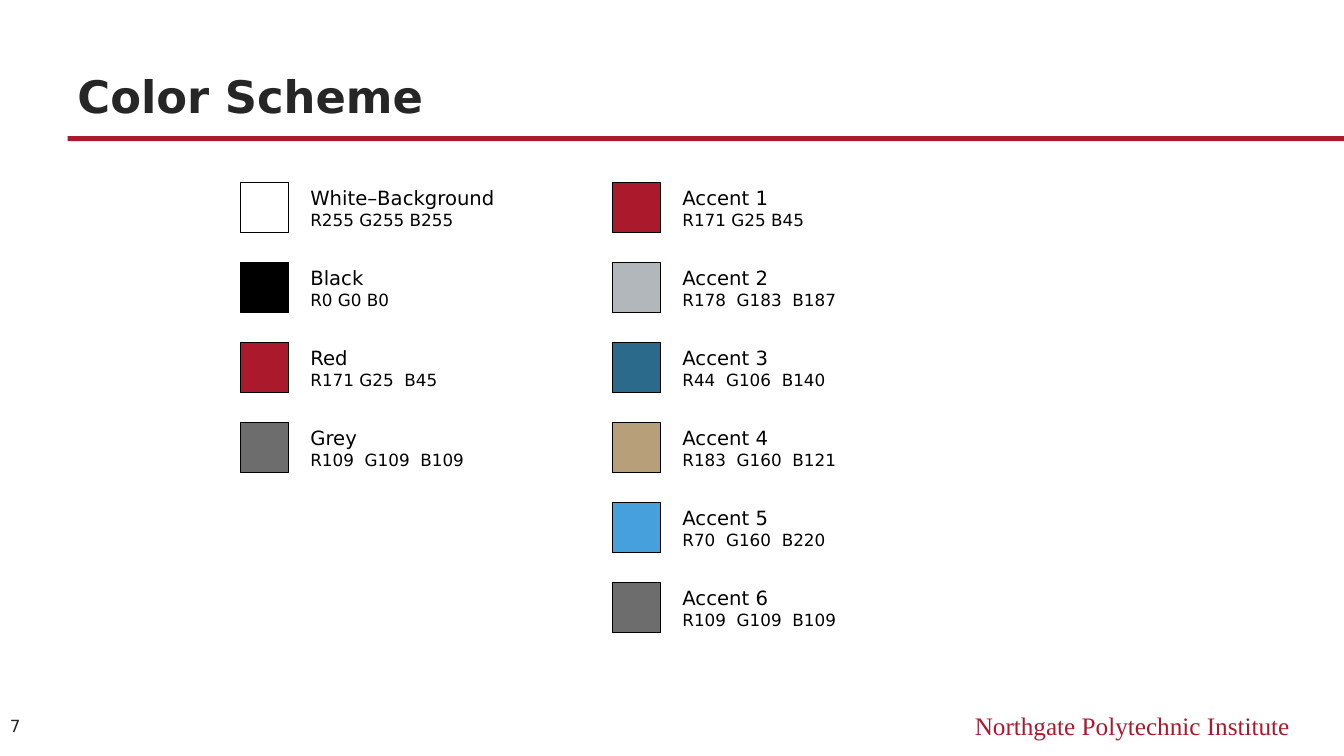
import pptx
import pptx.util
import pptx.dml.color
import pptx.enum.shapes
import pptx.enum.text
from pptx.util import Inches

RED = "AB192D"
BLACK = "000000"
DARK = "262626"
ROW_TOP, ROW_STEP = 1.81, 0.794

# Each column: left edge, then (name, values, fill, label width) from top to bottom
COLUMNS = [
    (2.39, [
        ("White–Background", "R255 G255 B255", "FFFFFF", 2.06),
        ("Black", "R0 G0 B0", BLACK, 1),
        ("Red", "R171 G25  B45", RED, 1.49),
        ("Grey", "R109  G109  B109", "6D6D6D", 1.83),
    ]),
    (6.08, [
        ("Accent 1", "R171 G25 B45", RED, 1.43),
        ("Accent 2", "R178  G183  B187", "B2B7BB", 1.77),
        ("Accent 3", "R44  G106  B140", "2C6A8C", 1.66),
        ("Accent 4", "R183  G160  B121", "B7A079", 1.77),
        ("Accent 5", "R70  G160  B220", "46A0DC", 1.66),
        ("Accent 6", "R109  G109  B109", "6D6D6D", 1.77),
    ]),
]

deck = pptx.Presentation()
deck.slide_width = Inches(13.33)
deck.slide_height = Inches(7.5)
page = deck.slides.add_slide(deck.slide_layouts[6])


def add_text(text, left, top, width, height, sizes, color=BLACK, font="DejaVu Sans",
             bold=False, align="LEFT", anchor="MIDDLE", wrap=True):
    """Add a text box with one paragraph per line of text, sized by sizes in order."""
    box = page.shapes.add_textbox(Inches(left), Inches(top), Inches(width), Inches(height))
    frame = box.text_frame
    frame.word_wrap = wrap
    frame.vertical_anchor = pptx.enum.text.MSO_ANCHOR[anchor]
    frame.text = text
    for para, size in zip(frame.paragraphs, sizes):
        para.alignment = pptx.enum.text.PP_ALIGN[align]
        para.font.size = pptx.util.Pt(size)
        para.font.name = font
        para.font.bold = bold
        para.font.color.rgb = pptx.dml.color.RGBColor.from_string(color)


def add_rectangle(left, top, width, height, fill, line=None):
    shape = page.shapes.add_shape(pptx.enum.shapes.MSO_SHAPE.RECTANGLE, Inches(left),
                                  Inches(top), Inches(width), Inches(height))
    shape.shadow.inherit = False
    shape.fill.solid()
    shape.fill.fore_color.rgb = pptx.dml.color.RGBColor.from_string(fill)
    if line:
        shape.line.color.rgb = pptx.dml.color.RGBColor.from_string(line)
        shape.line.width = pptx.util.Pt(0.75)
    else:
        shape.line.fill.background()


add_rectangle(0.67, 1.35, 12.67, 0.05, RED)
add_text("Northgate Polytechnic Institute", 8, 7, 4.89, 0.4, [18], color=RED,
         font="Times New Roman", align="RIGHT", anchor="TOP")
add_text("Color Scheme", 0.67, 0.38, 12, 0.88, [32], color=DARK, bold=True, anchor="BOTTOM")

for left, swatches in COLUMNS:
    for row, (name, values, fill, label_width) in enumerate(swatches):
        top = ROW_TOP + row * ROW_STEP
        add_rectangle(left, top, 0.47, 0.5, fill, line=BLACK)
        add_text(f"{name}\n{values}", left + 0.59, top - 0.02, label_width, 0.54,
                 [14, 12], wrap=False)

add_text("7", 0, 6.99, 0.67, 0.43, [12], color=DARK)

deck.save("out.pptx")
